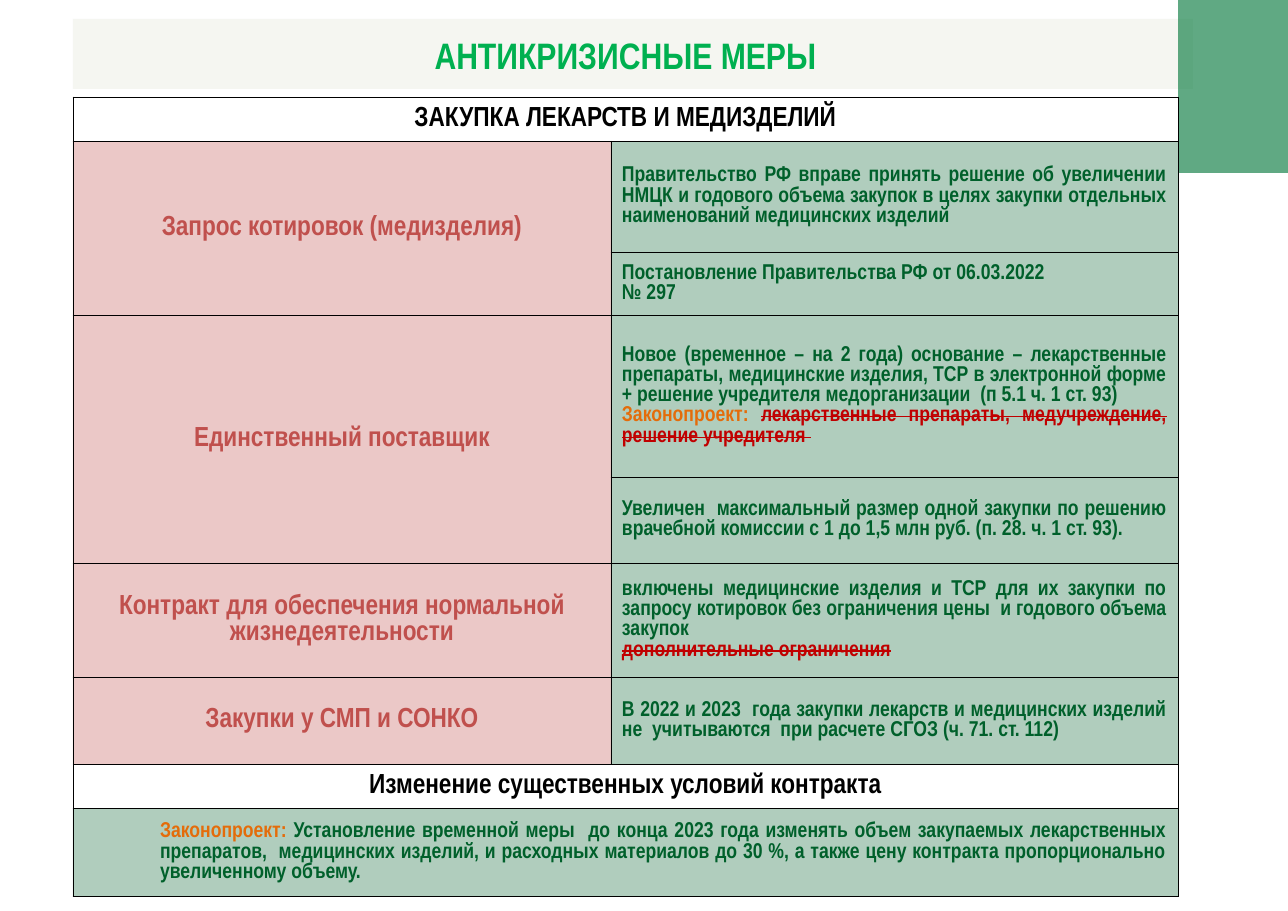
"""Builds the slide on anti-crisis measures in medical procurement."""
from lxml import etree
from pptx import Presentation
from pptx.dml.color import RGBColor
from pptx.enum.shapes import MSO_SHAPE
from pptx.enum.text import MSO_ANCHOR, PP_ALIGN
from pptx.oxml.ns import qn
from pptx.util import Pt

EMU_PER_PX = 8290
RECTANGLE = MSO_SHAPE.RECTANGLE
MIDDLE = MSO_ANCHOR.MIDDLE
CENTER = PP_ALIGN.CENTER
JUSTIFY = PP_ALIGN.JUSTIFY
FONT = "Arial Narrow"
BLACK, GREEN, RED = "000000", "00602B", "C0504D"
ORANGE, STRUCK = "E46C0A", "C00000"
TITLE_GREEN, BAND, ACCENT = "00B050", "F5F6F1", "077A3E"
BORDER_SIDES = ("a:lnL", "a:lnR", "a:lnT", "a:lnB")

COLUMN_WIDTHS = (538, 567)
ROW_HEIGHTS = (44, 111, 63, 162, 86, 114, 87, 44, 88)
LAST_INDENT = 76

HEADINGS = {
    0: "ЗАКУПКА ЛЕКАРСТВ И МЕДИЗДЕЛИЙ",
    7: "Изменение существенных условий контракта",
}
TOPICS = (
    (1, 2, "Запрос котировок (медизделия)"),
    (3, 4, "Единственный поставщик"),
    (5, 5, "Контракт для обеспечения нормальной жизнедеятельности"),
    (6, 6, "Закупки у СМП и СОНКО"),
)
MEASURES = {
    1: [[("Правительство РФ вправе принять решение об увеличении НМЦК и годового "
          "объема закупок в целях закупки отдельных наименований медицинских изделий", GREEN)]],
    2: [[("Постановление Правительства РФ от 06.03.2022 ", GREEN)],
        [("№ 297", GREEN)]],
    3: [[("Новое (временное – на 2 года) основание – лекарственные препараты, "
          "медицинские изделия, ТСР в электронной форме + решение учредителя "
          "медорганизации  (п 5.1 ч. 1 ст. 93)", GREEN)],
        [("Законопроект: ", ORANGE),
         ("лекарственные препараты, медучреждение, решение учредителя ", STRUCK)]],
    4: [[("Увеличен  максимальный размер одной закупки по решению врачебной "
          "комиссии с 1 до 1,5 млн руб. (п. 28. ч. 1 ст. 93).", GREEN)]],
    5: [[("включены медицинские изделия и ТСР для их закупки по запросу котировок "
          "без ограничения цены  и годового объема закупок", GREEN)],
        [("дополнительные ограничения", STRUCK)]],
    6: [[("В 2022 и 2023  года закупки лекарств и медицинских изделий "
          "не  учитываются  при расчете СГОЗ (ч. 71. ст. 112)", GREEN)]],
}
CONTRACT_CHANGE = [[
    ("Законопроект: ", ORANGE),
    ("Установление временной меры  до конца 2023 года изменять объем закупаемых "
     "лекарственных препаратов,  медицинских изделий, и расходных материалов до 30 %, "
     "а также цену контракта пропорционально увеличенному объему.", GREEN),
]]


def px(length):
    """Turn pixels into EMU."""
    return length * EMU_PER_PX


def rgb(value):
    """Turn a hex string into a colour."""
    return RGBColor.from_string(value)


def paint(fill, color, opacity=100):
    """Give a fill a solid colour with an opacity in percent."""
    fill.solid()
    fill.fore_color.rgb = rgb(color)
    if opacity < 100:
        srgb = fill._xPr.find(qn("a:solidFill")).find(qn("a:srgbClr"))
        etree.SubElement(srgb, qn("a:alpha")).set("val", str(opacity * 1000))


def write(frame, paragraphs, size, align):
    """Write paragraphs of (text, colour) runs into a text frame."""
    frame.word_wrap = True
    for index, runs in enumerate(paragraphs):
        paragraph = frame.paragraphs[0] if index == 0 else frame.add_paragraph()
        paragraph.alignment = align
        for text, color in runs:
            run = paragraph.add_run()
            run.text = text
            run.font.name = FONT
            run.font.size = Pt(size)
            run.font.bold = True
            run.font.color.rgb = rgb(color)
            if color == STRUCK:
                run.font._element.set("strike", "sngStrike")


def add_block(slide, left, top, width, height, color, opacity=100):
    """Add a plain rectangle without an outline."""
    block = slide.shapes.add_shape(RECTANGLE, px(left), px(top), px(width), px(height))
    block.shadow.inherit = False
    block.line.fill.background()
    paint(block.fill, color, opacity)


def add_title(slide, text):
    """Add the centred slide title."""
    title = slide.shapes.add_textbox(px(143), px(27), px(965), px(55))
    title.text_frame.vertical_anchor = MIDDLE
    write(title.text_frame, [[(text, TITLE_GREEN)]], 24, CENTER)


def add_borders(cell):
    """Draw thin black lines round a cell."""
    properties = cell._tc.get_or_add_tcPr()
    for side in BORDER_SIDES:
        line = etree.SubElement(properties, qn(side), w=str(Pt(0.5)))
        solid = etree.SubElement(line, qn("a:solidFill"))
        etree.SubElement(solid, qn("a:srgbClr"), val=BLACK)


def fill_cell(cell, paragraphs, size, align, tint=None):
    """Write a cell and tint it."""
    cell.vertical_anchor = MIDDLE
    write(cell.text_frame, paragraphs, size, align)
    if tint:
        paint(cell.fill, tint, 31)


def add_measures_table(slide):
    """Add the table of topics and measures."""
    table = slide.shapes.add_table(
        len(ROW_HEIGHTS), len(COLUMN_WIDTHS), px(73), px(97),
        px(sum(COLUMN_WIDTHS)), px(sum(ROW_HEIGHTS))).table
    table.first_row = table.horz_banding = False
    for column, width in zip(table.columns, COLUMN_WIDTHS):
        column.width = px(width)
    for row, height in zip(table.rows, ROW_HEIGHTS):
        row.height = px(height)
    for cell in table.iter_cells():
        add_borders(cell)
        cell.fill.background()

    for row, heading in HEADINGS.items():
        table.cell(row, 0).merge(table.cell(row, 1))
        fill_cell(table.cell(row, 0), [[(heading, BLACK)]], 18, CENTER)
    for first, last, topic in TOPICS:
        if last > first:
            table.cell(first, 0).merge(table.cell(last, 0))
        fill_cell(table.cell(first, 0), [[(topic, RED)]], 18, CENTER, RED)
    for row, paragraphs in MEASURES.items():
        fill_cell(table.cell(row, 1), paragraphs, 14, JUSTIFY, GREEN)

    last_row = len(ROW_HEIGHTS) - 1
    change = table.cell(last_row, 0)
    change.merge(table.cell(last_row, 1))
    fill_cell(change, CONTRACT_CHANGE, 14, JUSTIFY, GREEN)
    indented = change.text_frame.paragraphs[0]._p.get_or_add_pPr()
    indented.set("marL", str(px(LAST_INDENT)))
    indented.set("indent", "0")


def main():
    """Build and save the slide."""
    deck = Presentation()
    deck.slide_width, deck.slide_height = px(1288), px(911)
    slide = deck.slides.add_slide(deck.slide_layouts[6])
    add_block(slide, 73, 19, 1120, 70, BAND)
    add_title(slide, "АНТИКРИЗИСНЫЕ МЕРЫ")
    add_block(slide, 1178, -1, 110, 174, ACCENT, 64)
    add_measures_table(slide)
    deck.save("out.pptx")


if __name__ == "__main__":
    main()
